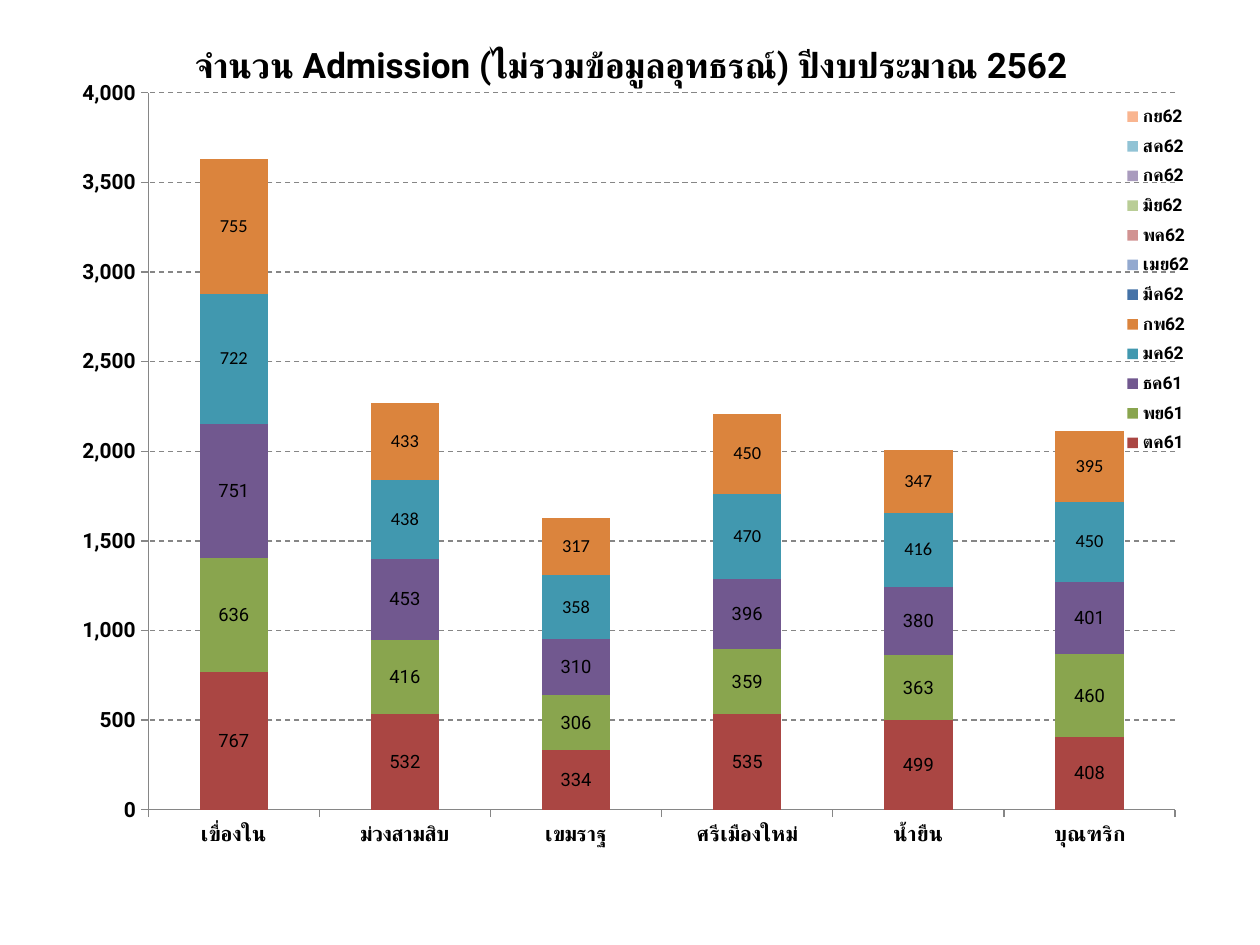
from dataclasses import dataclass
from typing import Optional

from lxml import etree
from pptx import Presentation
from pptx import util as u
from pptx.chart.data import CategoryChartData
from pptx.dml.color import RGBColor
from pptx.enum import chart as charts, dml, text
from pptx.oxml import ns

EMU_PER_PX = 914400 / 126


@dataclass(frozen=True)
class Theme:
    heading_font: str = "Roboto"
    body_font: str = "Calibri"
    ink: str = "000000"
    rule: str = "868686"
    title_size: float = 20
    base_size: float = 18
    axis_size: float = 12
    legend_size: float = 10
    label_size: float = 10.5


@dataclass(frozen=True)
class Month:
    name: str
    color: str
    admissions: tuple[Optional[int], ...] = (None,) * 6
    label_font: str = "Calibri"


@dataclass(frozen=True)
class Box:
    left: int
    top: int
    width: int
    height: int

    def emu(self) -> tuple[u.Emu, ...]:
        return tuple(px(v) for v in (self.left, self.top, self.width, self.height))


THEME = Theme()
SLIDE = Box(0, 0, 1260, 945)
TITLE = Box(105, 37, 1052, 55)
CHART = Box(44, 66, 1171, 814)
PLOT = Box(148, 93, 1027, 717)
LEGEND = Box(1120, 97, 76, 366)

HEADING = "จำนวน Admission (ไม่รวมข้อมูลอุทธรณ์) ปีงบประมาณ 2562"
DISTRICTS = ("เขื่องใน", "ม่วงสามสิบ", "เขมราฐ", "ศรีเมืองใหม่", "น้ำยืน", "บุณฑริก")
MONTHS = (
    Month("ตค61", "AA4643", (767, 532, 334, 535, 499, 408), "Roboto"),
    Month("พย61", "89A54E", (636, 416, 306, 359, 363, 460), "Roboto"),
    Month("ธค61", "71588F", (751, 453, 310, 396, 380, 401), "Roboto"),
    Month("มค62", "4198AF", (722, 438, 358, 470, 416, 450)),
    Month("กพ62", "DB843D", (755, 433, 317, 450, 347, 395)),
    Month("มีค62", "4572A7"),
    Month("เมย62", "93A9CF"),
    Month("พค62", "D19392"),
    Month("มิย62", "B9CD96"),
    Month("กค62", "A99BBD"),
    Month("สค62", "91C3D5"),
    Month("กย62", "F9B590"),
)


def px(length: int) -> u.Emu:
    return u.Emu(round(length * EMU_PER_PX))


def set_font(font, name: str, size: float, bold: bool = False) -> None:
    font.name = name
    font.size = u.Pt(size)
    font.bold = bold
    font.color.rgb = RGBColor.from_string(THEME.ink)


def add_thai_fonts(root) -> None:
    """Use each Latin typeface for complex scripts too."""
    for latin in list(root.iter(ns.qn("a:latin"))):
        thai = etree.Element(ns.qn("a:cs"), typeface=latin.get("typeface"))
        latin.addnext(thai)


def set_layout(parent, index: int, box: Box, inner: bool = False) -> None:
    """Place a chart part by hand, as fractions of the chart area."""
    for old in parent.findall(ns.qn("c:layout")):
        parent.remove(old)
    layout = etree.Element(ns.qn("c:layout"))
    manual = etree.SubElement(layout, ns.qn("c:manualLayout"))
    settings = {"layoutTarget": "inner"} if inner else {}
    settings |= {
        "xMode": "edge",
        "yMode": "edge",
        "x": (box.left - CHART.left) / CHART.width,
        "y": (box.top - CHART.top) / CHART.height,
        "w": box.width / CHART.width,
        "h": box.height / CHART.height,
    }
    for tag, value in settings.items():
        shown = value if isinstance(value, str) else f"{value:.3f}"
        etree.SubElement(manual, ns.qn(f"c:{tag}"), val=shown)
    parent.insert(index, layout)


def style_line(line) -> None:
    line.color.rgb = RGBColor.from_string(THEME.rule)
    line.width = u.Pt(0.75)


def style_axis(axis) -> None:
    axis.major_tick_mark = charts.XL_TICK_MARK.OUTSIDE
    axis.minor_tick_mark = charts.XL_TICK_MARK.NONE
    style_line(axis.format.line)
    set_font(axis.tick_labels.font, THEME.heading_font, THEME.axis_size, True)


def style_series(series, month: Month) -> None:
    series.format.fill.solid()
    series.format.fill.fore_color.rgb = RGBColor.from_string(month.color)
    series.invert_if_negative = False
    labels = series.data_labels
    labels.show_value = True
    labels.number_format = "#,##0"
    labels.number_format_is_linked = False
    set_font(labels.font, month.label_font, THEME.label_size)


def draw_admissions(slide) -> None:
    data = CategoryChartData(number_format="#,##0")
    data.categories = DISTRICTS
    for month in MONTHS:
        data.add_series(month.name, month.admissions)
    chart = slide.shapes.add_chart(
        charts.XL_CHART_TYPE.COLUMN_STACKED, *CHART.emu(), data
    ).chart
    chart.has_title = False
    set_font(chart.font, THEME.body_font, THEME.base_size)

    plot = chart.plots[0]
    plot.gap_width = 150
    plot.overlap = 100
    plot.vary_by_categories = False
    for series, month in zip(plot.series, MONTHS):
        style_series(series, month)

    style_axis(chart.category_axis)
    counts = chart.value_axis
    style_axis(counts)
    counts.minimum_scale, counts.maximum_scale, counts.major_unit = 0, 4000, 500
    counts.tick_labels.number_format = "#,##0"
    counts.tick_labels.number_format_is_linked = False
    counts.has_major_gridlines = True
    style_line(counts.major_gridlines.format.line)
    counts.major_gridlines.format.line.dash_style = dml.MSO_LINE.DASH

    chart.has_legend = True
    chart.legend.position = charts.XL_LEGEND_POSITION.RIGHT
    chart.legend.include_in_layout = True
    set_font(chart.legend.font, THEME.heading_font, THEME.legend_size, True)

    root = chart.element if hasattr(chart, "element") else chart._chartSpace
    set_layout(next(root.iter(ns.qn("c:plotArea"))), 0, PLOT, inner=True)
    set_layout(next(root.iter(ns.qn("c:legend"))), 1, LEGEND)
    add_thai_fonts(root)


def draw_title(slide) -> None:
    frame = slide.shapes.add_textbox(*TITLE.emu()).text_frame
    frame.word_wrap = True
    frame.auto_size = text.MSO_AUTO_SIZE.SHAPE_TO_FIT_TEXT
    frame.text = HEADING
    heading = frame.paragraphs[0]
    heading.alignment = text.PP_ALIGN.CENTER
    set_font(heading.runs[0].font, THEME.heading_font, THEME.title_size, True)
    add_thai_fonts(heading._p)


def main() -> None:
    deck = Presentation()
    deck.slide_width, deck.slide_height = px(SLIDE.width), px(SLIDE.height)
    slide = deck.slides.add_slide(deck.slide_layouts[6])
    draw_admissions(slide)
    draw_title(slide)
    deck.save("out.pptx")


if __name__ == "__main__":
    main()
